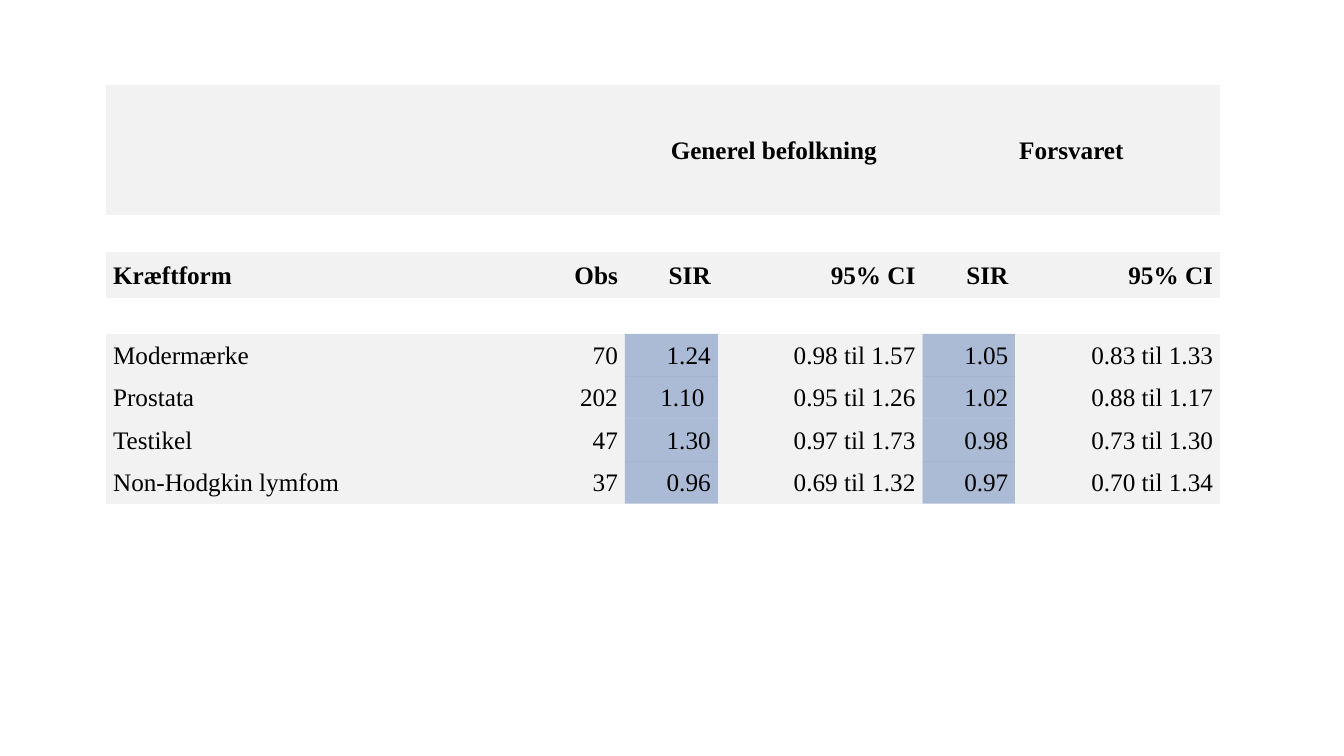
from lxml.etree import SubElement
from pptx import Presentation
from pptx.dml.color import RGBColor
from pptx.enum.text import MSO_ANCHOR, PP_ALIGN
from pptx.oxml.ns import qn
from pptx.util import Cm, Pt

COLORS = {"text": "000000", "grey": "F2F2F2", "blue": "2F5597"}
NO_STYLE = "{2D5ABB26-0587-4C30-8999-92F81FD0307C}"
LEFT = 2.67
NAME_W, NUM_W, CI_W = 10.74, 2.34, 5.16
COLUMNS = [NAME_W, NUM_W, NUM_W, CI_W, NUM_W, CI_W]
GROUP_COLUMNS = [NAME_W + NUM_W, NUM_W + CI_W, NUM_W + CI_W]
SIR_COLUMNS = (2, 4)

GROUPS = [["", "Generel befolkning", "Forsvaret"]]
HEADINGS = [["Kræftform", "Obs", "SIR", "95% CI", "SIR", "95% CI"]]
RESULTS = [
    ["Modermærke", "70", "1.24", "0.98 til 1.57", "1.05", "0.83 til 1.33"],
    ["Prostata", "202", "1.10 ", "0.95 til 1.26", "1.02", "0.88 til 1.17"],
    ["Testikel", "47", "1.30", "0.97 til 1.73", "0.98", "0.73 til 1.30"],
    ["Non-Hodgkin lymfom", "37", "0.96", "0.69 til 1.32", "0.97", "0.70 til 1.34"],
]


def write_text(tf, text, font="Times New Roman", size=18, color="text",
               bold=False, align=PP_ALIGN.LEFT, spacing=1.05):
    p = tf.paragraphs[0]
    p.alignment = align
    p.line_spacing = spacing
    if text:
        r = p.add_run()
        r.text = text
        r.font.name = font
        r.font.size = Pt(size)
        r.font.bold = bold
        r.font.color.rgb = RGBColor.from_string(COLORS[color])


class SlideBuilder:
    def __init__(self, slide, margin=0.18):
        self.slide = slide
        self.margin = Cm(margin)

    def fill(self, cell, color, opacity=100):
        cell.fill.solid()
        cell.fill.fore_color.rgb = RGBColor.from_string(COLORS[color])
        if opacity < 100:
            srgb = cell._tc.tcPr.find(".//" + qn("a:srgbClr"))
            SubElement(srgb, qn("a:alpha")).set("val", str(opacity * 1000))

    def table(self, rows, top, widths, row_height, align,
              bold=False, shaded=()):
        frame = self.slide.shapes.add_table(
            len(rows), len(widths), Cm(LEFT), Cm(top),
            Cm(sum(widths)), Cm(row_height * len(rows)))
        table = frame.table
        table.first_row = table.horz_banding = False
        table._tbl.tblPr.find(qn("a:tableStyleId")).text = NO_STYLE
        for column, width in zip(table.columns, widths):
            column.width = Cm(width)
        for i, values in enumerate(rows):
            table.rows[i].height = Cm(row_height)
            for j, text in enumerate(values):
                cell = table.cell(i, j)
                cell.margin_left = cell.margin_right = self.margin
                cell.margin_top = cell.margin_bottom = 0
                cell.vertical_anchor = MSO_ANCHOR.MIDDLE
                if j in shaded:
                    self.fill(cell, "blue", opacity=40)
                else:
                    self.fill(cell, "grey")
                write_text(cell.text_frame, text, bold=bold,
                           align=align if j else PP_ALIGN.LEFT)


def main():
    prs = Presentation()
    prs.slide_width, prs.slide_height = Cm(33.87), Cm(19.05)
    builder = SlideBuilder(prs.slides.add_slide(prs.slide_layouts[6]))

    # Results by cancer type
    builder.table(RESULTS, 8.41, COLUMNS, 1.07, PP_ALIGN.RIGHT,
                  shaded=SIR_COLUMNS)
    # Column headings
    builder.table(HEADINGS, 6.35, COLUMNS, 1.17, PP_ALIGN.RIGHT, bold=True)
    # Comparison groups
    builder.table(GROUPS, 2.13, GROUP_COLUMNS, 3.3, PP_ALIGN.CENTER, bold=True)

    prs.save("out.pptx")


if __name__ == "__main__":
    main()
